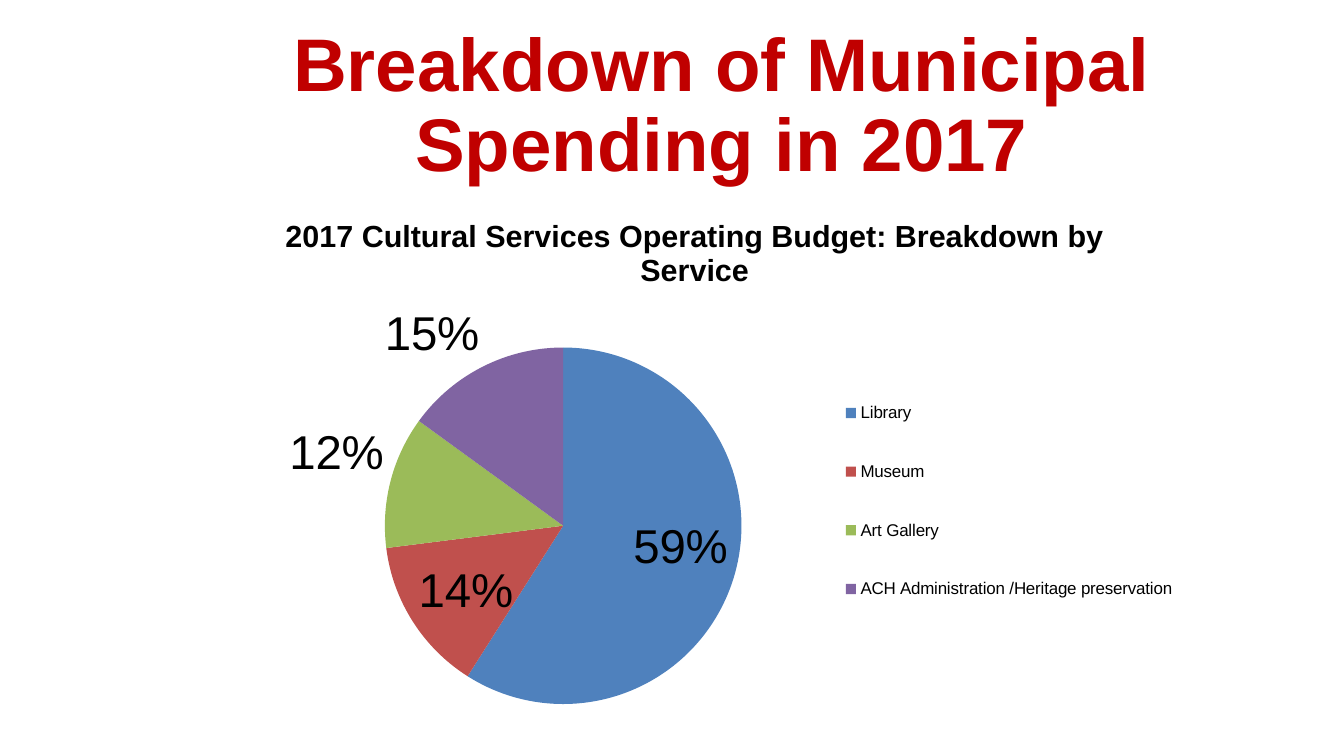
import pptx
import pptx.chart.data
import pptx.dml.color
import pptx.enum.chart
import pptx.enum.text
import pptx.oxml
import pptx.oxml.ns
import pptx.util
from pptx.util import Inches

FONT = "Arial"
COLORS = {
    "title": "C00000",
    "text": "000000",
    "Library": "4F81BD",
    "Museum": "C0504D",
    "Art Gallery": "9BBB59",
    "ACH Administration /Heritage preservation": "8064A2",
}
INSIDE = pptx.enum.chart.XL_LABEL_POSITION.INSIDE_END
OUTSIDE = pptx.enum.chart.XL_LABEL_POSITION.OUTSIDE_END
BUDGET = [
    ("Library", 59, INSIDE),
    ("Museum", 14, INSIDE),
    ("Art Gallery", 12, OUTSIDE),
    ("ACH Administration /Heritage preservation", 15, OUTSIDE),
]


def rgb(name):
    return pptx.dml.color.RGBColor.from_string(COLORS[name])


def format_font(font, size, color="text", bold=False):
    font.name = FONT
    font.size = pptx.util.Pt(size)
    font.bold = bold
    font.color.rgb = rgb(color)


def add_title(slide, text):
    title = slide.shapes.title
    title.left, title.top = Inches(1.89), Inches(0.3)
    title.width, title.height = Inches(8.06), Inches(1.16)
    frame = title.text_frame
    frame.text = text
    frame.word_wrap = True
    frame.auto_size = pptx.enum.text.MSO_AUTO_SIZE.NONE
    frame.vertical_anchor = pptx.enum.text.MSO_ANCHOR.MIDDLE
    frame.margin_left = frame.margin_right = 0
    frame.margin_top = frame.margin_bottom = 0
    paragraph = frame.paragraphs[0]
    paragraph.alignment = pptx.enum.text.PP_ALIGN.CENTER
    paragraph.line_spacing = 0.9
    format_font(paragraph.runs[0].font, 44, "title", True)


def set_layout(element, index, inner=False, **fractions):
    for layout in element.findall(pptx.oxml.ns.qn("c:layout")):
        element.remove(layout)
    target = '<c:layoutTarget val="inner"/>' if inner else ""
    modes = "".join(f'<c:{key}Mode val="edge"/>' for key in "xy")
    sizes = "".join(f'<c:{key} val="{value}"/>' for key, value in fractions.items())
    element.insert(index, pptx.oxml.parse_xml(
        f'<c:layout {pptx.oxml.ns.nsdecls("c")}><c:manualLayout>'
        f"{target}{modes}{sizes}</c:manualLayout></c:layout>"))


def add_chart_title(chart, text):
    chart.has_title = True
    frame = chart.chart_title.text_frame
    frame.text = text
    format_font(frame.paragraphs[0].runs[0].font, 18, bold=True)
    chart.chart_title.include_in_layout = False
    set_layout(chart.element.xpath("c:chart/c:title")[0], 1, x=0.11, y=0.05)


def add_legend(chart):
    chart.has_legend = True
    chart.legend.position = pptx.enum.chart.XL_LEGEND_POSITION.RIGHT
    chart.legend.include_in_layout = False
    format_font(chart.legend.font, 10)
    set_layout(chart.element.xpath("c:chart/c:legend")[0], 1,
               x=0.62, y=0.33, w=0.37, h=0.5)


def format_slices(chart):
    plot = chart.plots[0]
    plot.vary_by_categories = True
    plot.has_data_labels = True
    series = plot.series[0]
    labels = series.data_labels
    labels.show_value = False
    labels.show_percentage = True
    labels.number_format = "0%"
    labels.number_format_is_linked = False
    format_font(labels.font, 28)
    for index, (service, _, position) in enumerate(BUDGET):
        point = series.points[index]
        point.format.fill.solid()
        point.format.fill.fore_color.rgb = rgb(service)
        point.format.line.fill.background()
        format_font(point.data_label.font, 28)
        point.data_label.position = position
    for name, value in (("showVal", "0"), ("showPercent", "1")):
        for flag in chart.element.xpath(f".//c:dLbl/c:{name}"):
            flag.set("val", value)


def add_budget_pie(slide):
    data = pptx.chart.data.CategoryChartData(number_format="#,##0")
    data.categories = [service for service, _, _ in BUDGET]
    data.add_series("Series 1", [value for _, value, _ in BUDGET])
    chart = slide.shapes.add_chart(
        pptx.enum.chart.XL_CHART_TYPE.PIE, Inches(1.35), Inches(1.5),
        Inches(8.6), Inches(4.5), data).chart
    format_font(chart.font, 10)
    add_chart_title(chart, "2017 Cultural Services Operating Budget: Breakdown by Service")
    add_legend(chart)
    format_slices(chart)
    set_layout(chart.element.xpath("c:chart/c:plotArea")[0], 0, inner=True,
               x=0.21, y=0.3, w=0.34, h=0.65)


def main():
    presentation = pptx.Presentation()
    presentation.slide_width = Inches(11.02)
    presentation.slide_height = Inches(6.2)
    slide = presentation.slides.add_slide(presentation.slide_layouts[5])
    add_title(slide, "Breakdown of Municipal Spending in 2017")
    add_budget_pie(slide)
    presentation.save("out.pptx")


if __name__ == "__main__":
    main()
